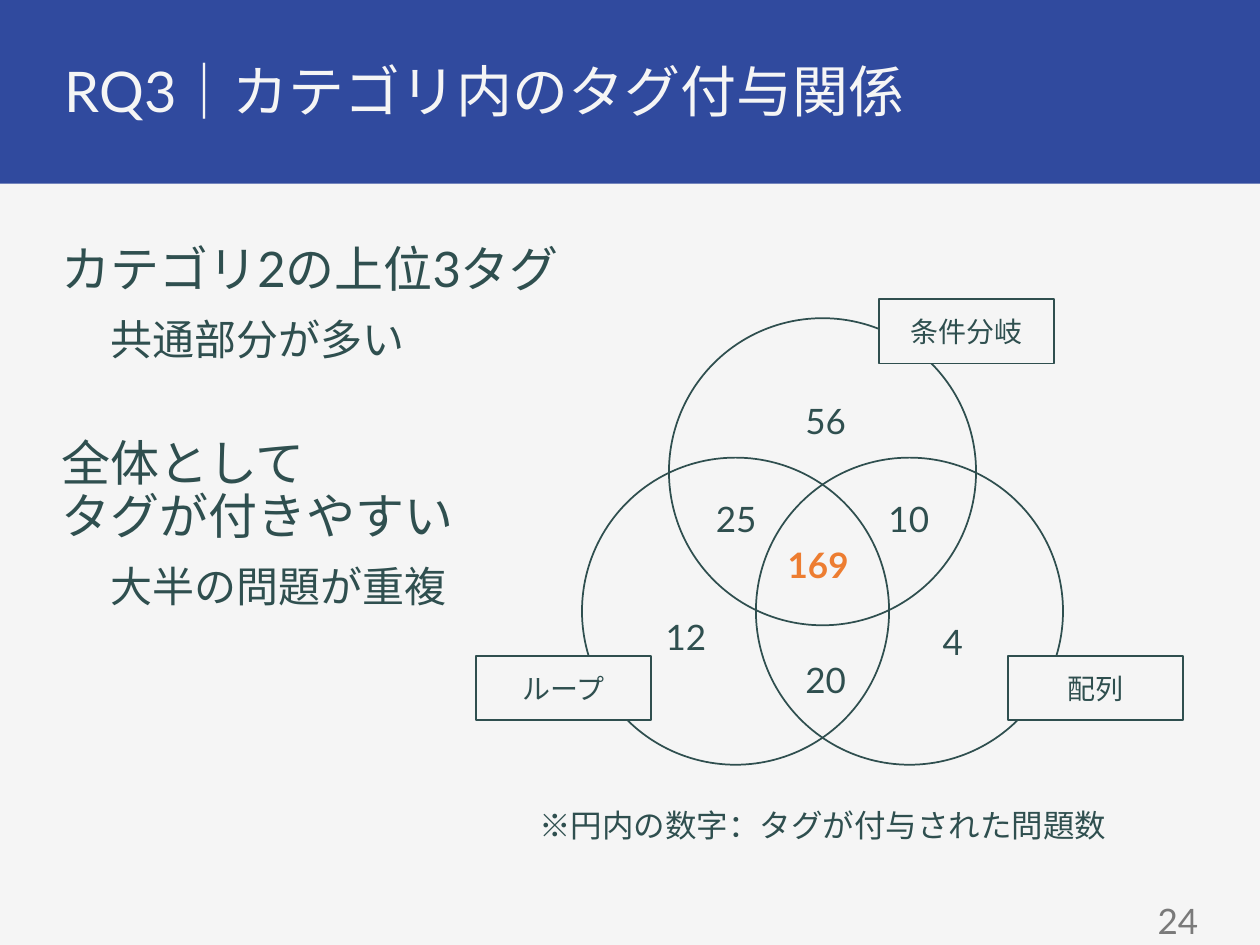
from lxml.etree import SubElement
from pptx import Presentation
from pptx.dml.color import RGBColor
from pptx.enum.shapes import MSO_SHAPE as Shape
from pptx.enum.text import MSO_ANCHOR as Anchor, PP_ALIGN as Align
from pptx.oxml.ns import qn
from pptx.util import Pt

COLORS = {
    "banner": "304A9E",
    "paper": "F5F5F5",
    "ink": "2F4F4F",
    "accent": "ED7D31",
    "muted": "7A7A7A",
}
LATIN, JAPANESE = "Lato", "Noto Sans CJK JP"


def color(name):
    return RGBColor.from_string(COLORS[name])


def set_attributes(target, values):
    for name, value in values.items():
        setattr(target, name, value)


def write(para, text, size, ink="ink", font=LATIN, bold=False, **layout):
    """Fill one paragraph and format its spans."""
    para.text = text
    set_attributes(para, layout)
    for span in para.runs:
        set_attributes(span.font, {"size": Pt(size), "name": font, "bold": bold})
        span.font.color.rgb = color(ink)
        SubElement(span.font._element, qn("a:ea"), typeface=JAPANESE)


def add_text_box(shapes, box, margin=0, anchor=Anchor.TOP, wrap=True):
    frame = shapes.add_textbox(*map(Pt, box)).text_frame
    set_attributes(frame, {
        "word_wrap": wrap, "vertical_anchor": anchor,
        "margin_left": Pt(margin), "margin_right": Pt(margin),
        "margin_top": Pt(margin), "margin_bottom": Pt(margin),
    })
    return frame


def add_figure(shapes, kind, box, fill=None, line=None):
    figure = shapes.add_shape(kind, *map(Pt, box))
    figure.shadow.inherit = False
    if fill:
        figure.fill.solid()
        figure.fill.fore_color.rgb = color(fill)
    else:
        figure.fill.background()
    if line:
        figure.line.color.rgb = color(line)
        figure.line.width = Pt(1)
    else:
        figure.line.fill.background()
    return figure


def add_header(page, box, title):
    left, top, width, height = box
    add_figure(page.shapes, Shape.RECTANGLE, box, fill="banner")
    frame = add_text_box(page.shapes, (left + 31, top + 31, width - 62, 42.5), 5.8)
    write(frame.paragraphs[0], title, 32, "paper",
          line_spacing=0.9, space_before=Pt(16))


def add_points(page, box, points):
    """Each point is a heading with one indented remark below it."""
    frame = add_text_box(page.shapes, box, 4.3)
    para = frame.paragraphs[0]
    for index, (heading, remark) in enumerate(points):
        if index:
            para = frame.add_paragraph()
        write(para, heading, 28, line_spacing=0.9,
              space_before=Pt(42.4 if index else 14))
        para = frame.add_paragraph()
        write(para, remark, 24, line_spacing=0.9, space_before=Pt(12))
        para._p.get_or_add_pPr().set("marL", str(Pt(28)))


def add_venn(page, box):
    left, top, width, height = box
    shapes = page.shapes.add_group_shape().shapes
    diameter = 175.5
    middle, spread = left + 198, 49.7
    upper, lower = top + 10.8, top + height - diameter

    # Circles
    for center, circle_top in ((middle, upper), (middle - spread, lower),
                               (middle + spread, lower)):
        add_figure(shapes, Shape.OVAL,
                   (center - diameter / 2, circle_top, diameter, diameter),
                   line="ink")

    # Tag names
    tag_width, tag_height = 100, 36.7
    for name, x, y in (("条件分岐", 230.4, 0), ("ループ", 0, 203.8),
                       ("配列", width - tag_width, 203.8)):
        tag = add_figure(shapes, Shape.RECTANGLE,
                         (left + x, top + y, tag_width, tag_height),
                         fill="paper", line="ink")
        write(tag.text_frame.paragraphs[0], name, 16, font=JAPANESE,
              alignment=Align.CENTER)

    # Counts, placed by their centres
    count_width, count_height = 60, 31.6
    for count, x, y in ((169, 195.5, 152), (25, 148.7, 125.3), (10, 247.3, 125.3),
                        (20, 199.8, 217.4), (56, 199.8, 69.8),
                        (12, 119.9, 193), (4, 272.5, 195.8)):
        frame = add_text_box(shapes, (left + x - count_width / 2,
                                      top + y - count_height / 2,
                                      count_width, count_height), 3.6)
        shared = count == 169
        write(frame.paragraphs[0], str(count), 20, "accent" if shared else "ink",
              bold=shared, alignment=Align.CENTER)


def add_note(page, box, text):
    frame = add_text_box(page.shapes, box, wrap=False)
    write(frame.paragraphs[0], text, 18)


def add_page_number(page, box, number):
    frame = add_text_box(page.shapes, box, 4.3, Anchor.MIDDLE)
    write(frame.paragraphs[0], str(number), 20, "muted", alignment=Align.RIGHT)


def main():
    deck = Presentation()
    deck.slide_width, deck.slide_height = Pt(720), Pt(540)
    page = deck.slides.add_slide(deck.slide_layouts[6])
    page.background.fill.solid()
    page.background.fill.fore_color.rgb = color("paper")

    add_header(page, (0, 0, 720, 105), "RQ3｜カテゴリ内のタグ付与関係")
    add_points(page, (31, 136, 657, 373), (
        ("カテゴリ2の上位3タグ", "共通部分が多い"),
        ("全体として\vタグが付きやすい", "大半の問題が重複"),
    ))
    add_page_number(page, (527, 512, 162, 28), 24)
    add_venn(page, (272, 171, 404, 266))
    add_note(page, (308, 460.8, 328, 25), "※円内の数字：タグが付与された問題数")
    deck.save("out.pptx")


if __name__ == "__main__":
    main()
